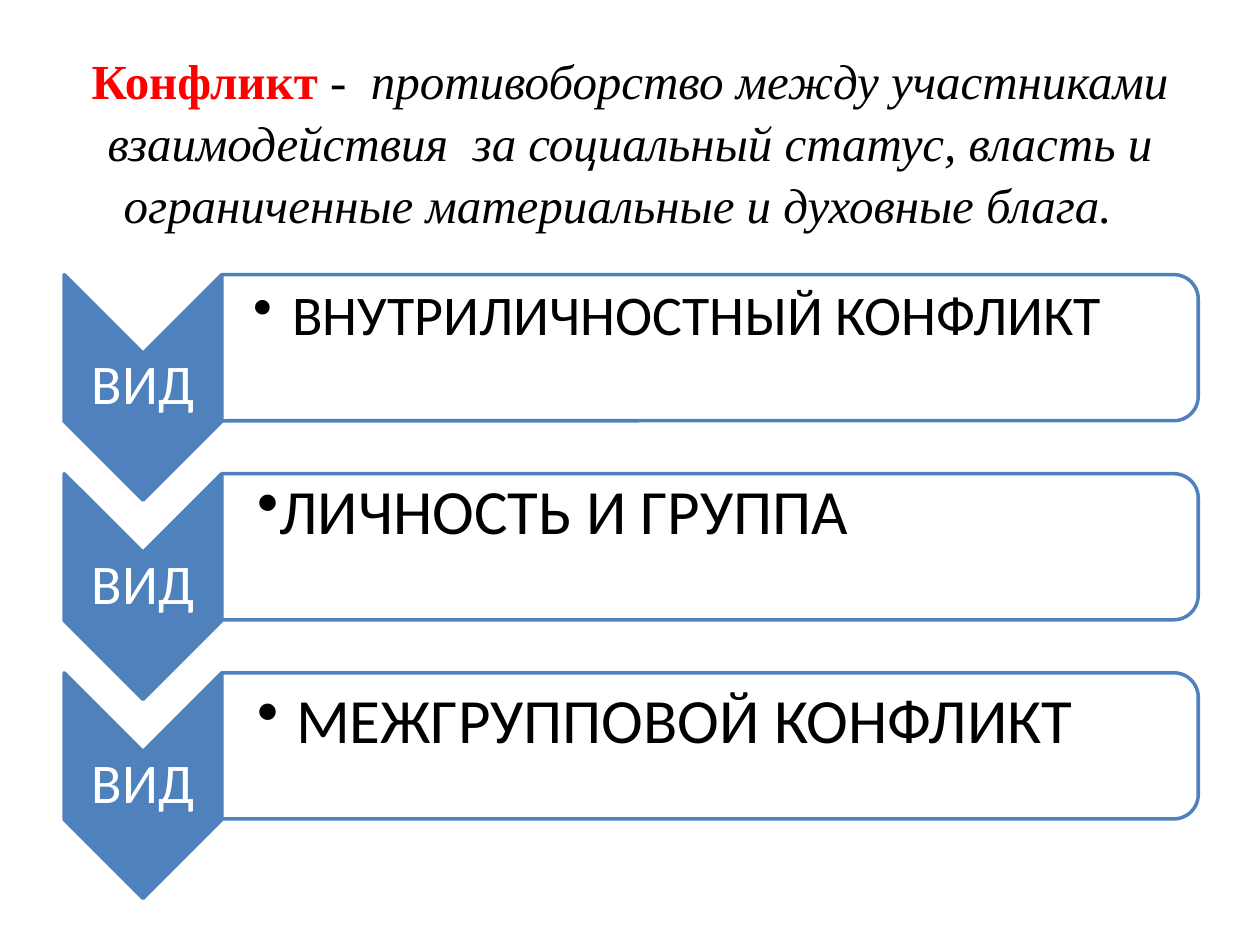
"""Build a slide that defines conflict and lists its three kinds."""
from dataclasses import dataclass

from lxml import etree
from pptx import Presentation
from pptx.dml.color import RGBColor
from pptx.enum.shapes import MSO_SHAPE
from pptx.enum.text import MSO_ANCHOR, PP_ALIGN
from pptx.oxml.ns import qn
from pptx.util import Emu, Inches, Pt

CHEVRON = MSO_SHAPE.CHEVRON
PANEL = MSO_SHAPE.ROUND_2_SAME_RECTANGLE
TOP, MIDDLE = MSO_ANCHOR.TOP, MSO_ANCHOR.MIDDLE
CENTER, LEFT = PP_ALIGN.CENTER, PP_ALIGN.LEFT


@dataclass(frozen=True)
class Theme:
    """Colours, fonts and type sizes."""
    accent: RGBColor = RGBColor(0x4F, 0x81, 0xBD)
    paper: RGBColor = RGBColor(0xFF, 0xFF, 0xFF)
    ink: RGBColor = RGBColor(0, 0, 0)
    term: RGBColor = RGBColor(0xFF, 0, 0)
    title_font: str = "Times New Roman"
    body_font: str = "Calibri"
    title_size: int = 28
    label_size: int = 32
    outline: int = 2


@dataclass(frozen=True)
class ConflictKind:
    """One row: its wording, type size, insets and bullet indent."""
    wording: str
    size: int
    left_inset: float
    top_inset: float
    indent: float


THEME = Theme()
KINDS = (
    ConflictKind("ВНУТРИЛИЧНОСТНЫЙ КОНФЛИКТ", 32, 0.25, 0.05, 0.31),
    ConflictKind("ЛИЧНОСТЬ И ГРУППА", 36, 0.28, 0, 0),
    ConflictKind("МЕЖГРУППОВОЙ КОНФЛИКТ", 36, 0.28, 0.08, 0.31),
)
FIRST_TOP, ROW_PITCH = 2.18, 1.58


def set_all(target, values: dict) -> None:
    """Set every named attribute on the target."""
    for name, value in values.items():
        setattr(target, name, value)


def add_text_area(slide, box: tuple, insets: tuple, anchor, alignment, spacing: float):
    """Add a wrapping text box and return its first paragraph."""
    frame = slide.shapes.add_textbox(*map(Inches, box)).text_frame
    left, top, right, bottom = map(Inches, insets)
    set_all(frame, {"word_wrap": True, "vertical_anchor": anchor,
                    "margin_left": left, "margin_top": top,
                    "margin_right": right, "margin_bottom": bottom})
    paragraph = frame.paragraphs[0]
    set_all(paragraph, {"alignment": alignment, "line_spacing": spacing})
    return paragraph


def add_run(paragraph, wording: str, color: RGBColor, **font_values) -> None:
    """Append a formatted run."""
    run = paragraph.add_run()
    run.text = wording
    set_all(run.font, font_values)
    run.font.color.rgb = color


def add_turned_shape(slide, preset, box: tuple, fill: RGBColor):
    """Add an outlined shape turned by 90 degrees that covers the given box."""
    left, top, width, height = box
    shift = (width - height) / 2
    shape = slide.shapes.add_shape(preset, Inches(left + shift), Inches(top - shift),
                                   Inches(height), Inches(width))
    shape.rotation = 90
    shape.shadow.inherit = False
    shape.fill.solid()
    shape.fill.fore_color.rgb = fill
    shape.line.color.rgb = THEME.accent
    shape.line.width = Pt(THEME.outline)
    return shape


def add_bullet(paragraph, indent: float) -> None:
    """Give the paragraph a round bullet with a hanging indent."""
    properties = paragraph._p.get_or_add_pPr()
    hang: Emu = Inches(indent)
    properties.set("marL", str(hang))
    properties.set("indent", str(-hang))
    etree.SubElement(properties, qn("a:buChar")).set("char", "•")


def add_definition(slide) -> None:
    """Write the definition at the top."""
    paragraph = add_text_area(slide, (0.5, 0.13, 9, 1.97), (0.1, 0.05, 0.1, 0.05),
                              MIDDLE, CENTER, 1.05)
    style = {"name": THEME.title_font, "size": Pt(THEME.title_size)}
    add_run(paragraph, "Конфликт ", THEME.term, bold=True, **style)
    add_run(paragraph,
            "-  противоборство между участниками взаимодействия  за социальный "
            "статус, власть и ограниченные материальные и духовные блага.  ",
            THEME.ink, italic=True, **style)


def add_kind(slide, kind: ConflictKind, top: float) -> None:
    """Draw one chevron with its label, panel and wording."""
    add_turned_shape(slide, CHEVRON, (0.51, top, 1.25, 1.79), THEME.accent)
    label = add_text_area(slide, (0.51, top + 0.62, 1.25, 0.54), (0.02,) * 4,
                          MIDDLE, CENTER, 0.9)
    add_run(label, "ВИД", THEME.paper, name=THEME.body_font, size=Pt(THEME.label_size))
    add_turned_shape(slide, PANEL, (1.76, top, 7.75, 1.16), THEME.paper)
    wording = add_text_area(slide, (1.76, top + 0.05, 7.69, 1.05),
                            (kind.left_inset, kind.top_inset, 0.02, 0.02),
                            TOP, LEFT, 0.9)
    add_bullet(wording, kind.indent)
    add_run(wording, kind.wording, THEME.ink, name=THEME.body_font, size=Pt(kind.size))


def main() -> None:
    """Build and save the slide."""
    deck = Presentation()
    set_all(deck, {"slide_width": Inches(10), "slide_height": Inches(7.5)})
    slide = deck.slides.add_slide(deck.slide_layouts[6])
    add_definition(slide)
    for row, kind in enumerate(KINDS):
        add_kind(slide, kind, FIRST_TOP + row * ROW_PITCH)
    deck.save("out.pptx")


if __name__ == "__main__":
    main()
